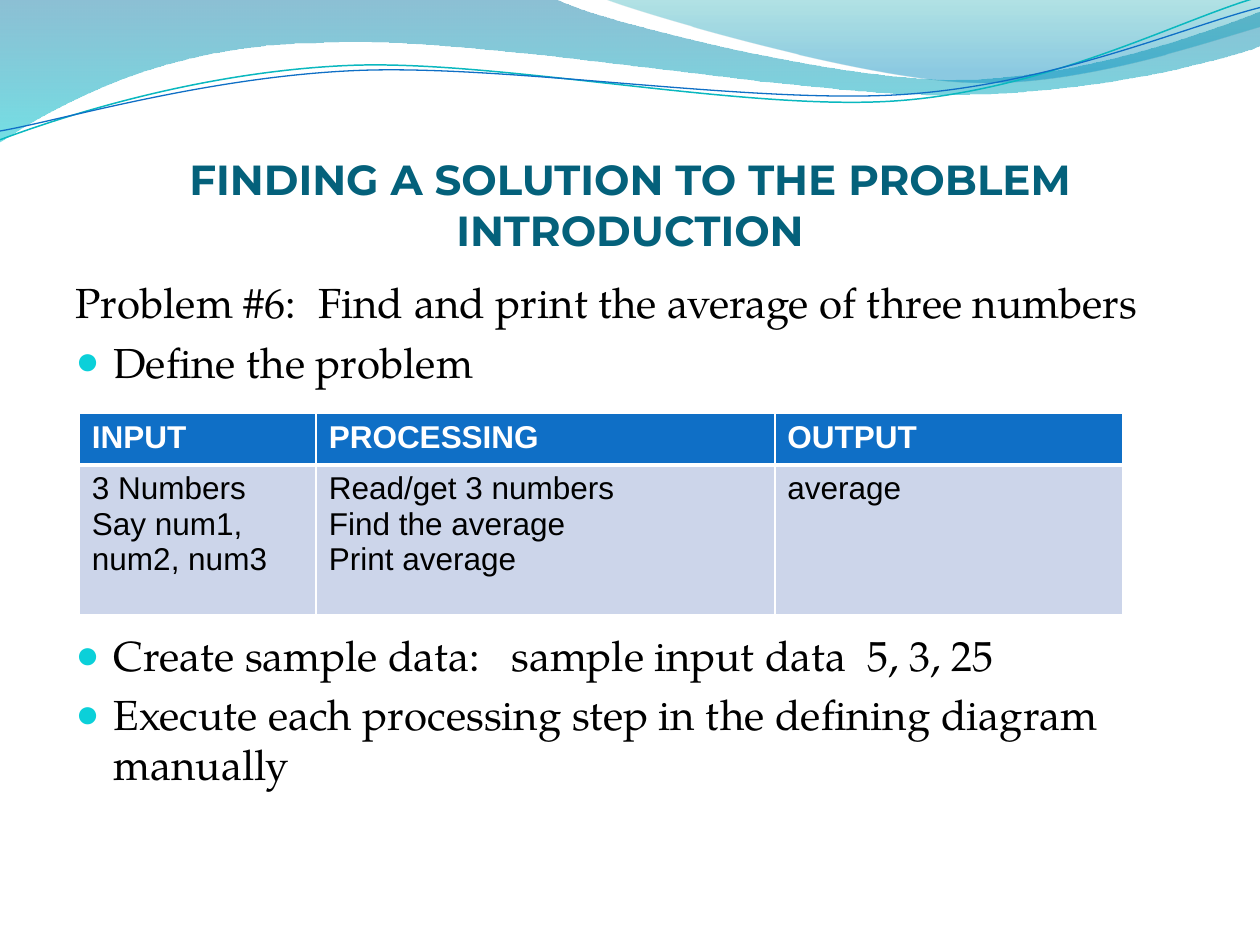
import dataclasses

import lxml.etree
import pptx
import pptx.dml.color
import pptx.enum.text
import pptx.oxml.ns
import pptx.util

Inches = pptx.util.Inches
Pt = pptx.util.Pt
qn = pptx.oxml.ns.qn


@dataclasses.dataclass(frozen=True)
class Theme:
    title_font: str = "Montserrat"
    body_font: str = "TeX Gyre Pagella"
    table_font: str = "Arial"
    text_size: float = 24
    gap_size: float = 26
    table_size: float = 18
    paragraph_gap: float = 4.6
    title: str = "04617B"
    text: str = "000000"
    white: str = "FFFFFF"
    bullet: str = "0BD0D9"
    header: str = "0F6FC6"
    cell: str = "CCD5EA"
    teal_line: str = "0AB8BF"
    # Gradient stops: position, colour, opacity percent
    wide_wave: tuple = ((0, "0074A1", 45), (1, "00C6CF", 55))
    right_wave: tuple = ((0, "00A1A9", 30), (0.8, "008BBF", 45))


THEME = Theme()

# Wave outlines in inches: one point for a line, three for a cubic curve
WIDE_WAVE = [
    [(0, -0.01)], [(4.4, -0.01)], [(4.76, 0.17), (6.64, 0.63), (7.58, 0.63)],
    [(8.53, 0.63), (9.58, 0.26), (10, 0.09)], [(10.01, 0.36)],
    [(9.83, 0.44), (8.7, 0.76), (7.46, 0.75)],
    [(6.22, 0.75), (3.82, 0.28), (2.57, 0.34)],
    [(1.29, 0.35), (0.46, 0.83), (-0.01, 1.13)], [(0, -0.01)],
]
RIGHT_WAVE = [
    [(4.79, -0.01)], [(5.09, 0.11), (6.82, 0.62), (7.69, 0.65)],
    [(8.56, 0.69), (9.61, 0.32), (10, 0.21)], [(10, 0)], [(4.79, -0.01)],
]
TEAL_LINE = [
    [(0, 1.11)], [(0.48, 0.93), (1.58, 0.57), (2.77, 0.52)],
    [(3.95, 0.47), (5.93, 0.89), (7.13, 0.8)],
    [(8.33, 0.71), (9.38, 0.15), (9.98, -0.02)],
]
BLUE_LINE = [
    [(0, 1.04)], [(0.47, 0.96), (1.64, 0.61), (2.83, 0.56)],
    [(4.03, 0.51), (5.97, 0.83), (7.17, 0.75)],
    [(8.36, 0.67), (9.41, 0.21), (10, 0.06)],
]


def rgb(colour):
    return pptx.dml.color.RGBColor.from_string(colour)


def add_run(paragraph, text, font, size, colour, bold=False):
    run = paragraph.add_run()
    run.text = text
    run.font.name = font
    run.font.size = Pt(size)
    run.font.bold = bold
    run.font.color.rgb = rgb(colour)


def place(part, box):
    part.left, part.top, part.width, part.height = map(Inches, box)


def add_outline(slide, box, segments, closed):
    left, top = box[:2]
    points = [(Inches(left + x), Inches(top + y)) for segment in segments for x, y in segment]
    builder = slide.shapes.build_freeform(*points[0])
    builder.add_line_segments(points[1:], close=closed)
    outline = builder.convert_to_shape()
    outline.shadow.inherit = False
    # Join each run of three points into one cubic curve
    steps = iter(list(outline._element.iter(qn("a:lnTo"))))
    for segment in segments[1:]:
        first = next(steps)
        if len(segment) == 3:
            first.tag = qn("a:cubicBezTo")
            for step in (next(steps), next(steps)):
                first.append(step[0])
                step.getparent().remove(step)
    return outline


def add_waves(slide, box):
    # Translucent bands
    for segments, stops in ((WIDE_WAVE, THEME.wide_wave), (RIGHT_WAVE, THEME.right_wave)):
        band = add_outline(slide, box, segments, True)
        band.line.fill.background()
        band.fill.gradient()
        band.fill.gradient_angle = 270
        for stop, (position, colour, _) in zip(band.fill.gradient_stops, stops):
            stop.position = position
            stop.color.rgb = rgb(colour)
        gradient = band._element.spPr.find(qn("a:gradFill"))
        for colour_node, (_, _, opacity) in zip(gradient.iter(qn("a:srgbClr")), stops):
            lxml.etree.SubElement(colour_node, qn("a:alpha"), val=str(opacity * 1000))
    # Thin lines
    for segments, colour, width in ((TEAL_LINE, THEME.teal_line, 0.85),
                                    (BLUE_LINE, THEME.header, 0.75)):
        curve = add_outline(slide, box, segments, False)
        curve.fill.background()
        curve.line.color.rgb = rgb(colour)
        curve.line.width = Pt(width)


def fill_title(title, box):
    place(title, box)
    frame = title.text_frame
    frame.auto_size = pptx.enum.text.MSO_AUTO_SIZE.NONE
    frame.vertical_anchor = pptx.enum.text.MSO_ANCHOR.BOTTOM
    frame.margin_left = frame.margin_right = frame.margin_bottom = 0
    heading = frame.paragraphs[0]
    heading.alignment = pptx.enum.text.PP_ALIGN.CENTER
    style = (THEME.title_font, THEME.text_size, THEME.title, True)
    add_run(heading, "FINDING A SOLUTION TO THE PROBLEM", *style)
    heading.add_line_break()
    add_run(heading, "INTRODUCTION", *style)


def format_item(paragraph, bulleted, space_before):
    paragraph.space_before = Pt(space_before)
    properties = paragraph._p.get_or_add_pPr()
    properties.set("marL", str(Inches(0.3)))
    properties.set("indent", str(Inches(-0.3)))
    if not bulleted:
        lxml.etree.SubElement(properties, qn("a:buNone"))
        return
    bullet_colour = lxml.etree.SubElement(properties, qn("a:buClr"))
    lxml.etree.SubElement(bullet_colour, qn("a:srgbClr"), val=THEME.bullet)
    lxml.etree.SubElement(properties, qn("a:buSzPct"), val="95000")
    lxml.etree.SubElement(properties, qn("a:buChar"), char="●")


def fill_body(body, box):
    place(body, box)
    frame = body.text_frame
    frame.auto_size = pptx.enum.text.MSO_AUTO_SIZE.NONE
    table_gap = 139  # leaves room for the table
    items = [
        (["Problem #6:", "  ", "Find and print the average of three numbers"],
         False, THEME.paragraph_gap),
        (["Define the problem"], True, THEME.paragraph_gap),
        (["Create sample data:   sample input data  5, 3, 25"], True, table_gap),
        (["Execute each processing step in the defining diagram manually"],
         True, THEME.paragraph_gap),
    ]
    for index, (texts, bulleted, space_before) in enumerate(items):
        item = frame.add_paragraph() if index else frame.paragraphs[0]
        format_item(item, bulleted, space_before)
        for text in texts:
            size = THEME.text_size if text.strip() else THEME.gap_size
            add_run(item, text, THEME.body_font, size, THEME.text)


def add_borders(cell, bottom_width):
    properties = cell._tc.get_or_add_tcPr()
    for side, width in (("L", 1), ("R", 1), ("T", 1), ("B", bottom_width)):
        border = lxml.etree.SubElement(properties, qn("a:ln" + side), w=str(Pt(width)))
        fill = lxml.etree.SubElement(border, qn("a:solidFill"))
        lxml.etree.SubElement(fill, qn("a:srgbClr"), val=THEME.white)


def add_defining_diagram(slide, box):
    rows = [
        [["INPUT"], ["PROCESSING"], ["OUTPUT"]],
        [["3 Numbers", "Say num1, num2, num3"],
         ["Read/get 3 numbers", "Find the average", "Print average"], ["average"]],
    ]
    diagram = slide.shapes.add_table(2, 3, *map(Inches, box)).table
    for column, width in zip(diagram.columns, (1.88, 3.64, 2.76)):
        column.width = Inches(width)
    for row, height in zip(diagram.rows, (0.41, 1.19)):
        row.height = Inches(height)
    for r, row in enumerate(rows):
        is_header = r == 0
        for c, lines in enumerate(row):
            cell = diagram.cell(r, c)
            add_borders(cell, 3 if is_header else 1)
            cell.fill.solid()
            cell.fill.fore_color.rgb = rgb(THEME.header if is_header else THEME.cell)
            for index, text in enumerate(lines):
                line = cell.text_frame.add_paragraph() if index else cell.text_frame.paragraphs[0]
                add_run(line, text, THEME.table_font, THEME.table_size,
                        THEME.white if is_header else THEME.text, is_header)


def main():
    deck = pptx.Presentation()
    deck.slide_width, deck.slide_height = Inches(10), Inches(7.5)
    slide = deck.slides.add_slide(deck.slide_layouts[1])
    title, body = slide.placeholders
    add_waves(slide, (0, 0, 10, 1.14))
    # Text stands in front of the waves
    for part in (title, body):
        slide.shapes._spTree.append(part._element)
    fill_title(title, (0.5, 0.77, 9, 1.25))
    fill_body(body, (0.5, 2.12, 9, 4.8))
    add_defining_diagram(slide, (0.63, 3.28, 8.28, 1.6))
    deck.save("out.pptx")


if __name__ == "__main__":
    main()
